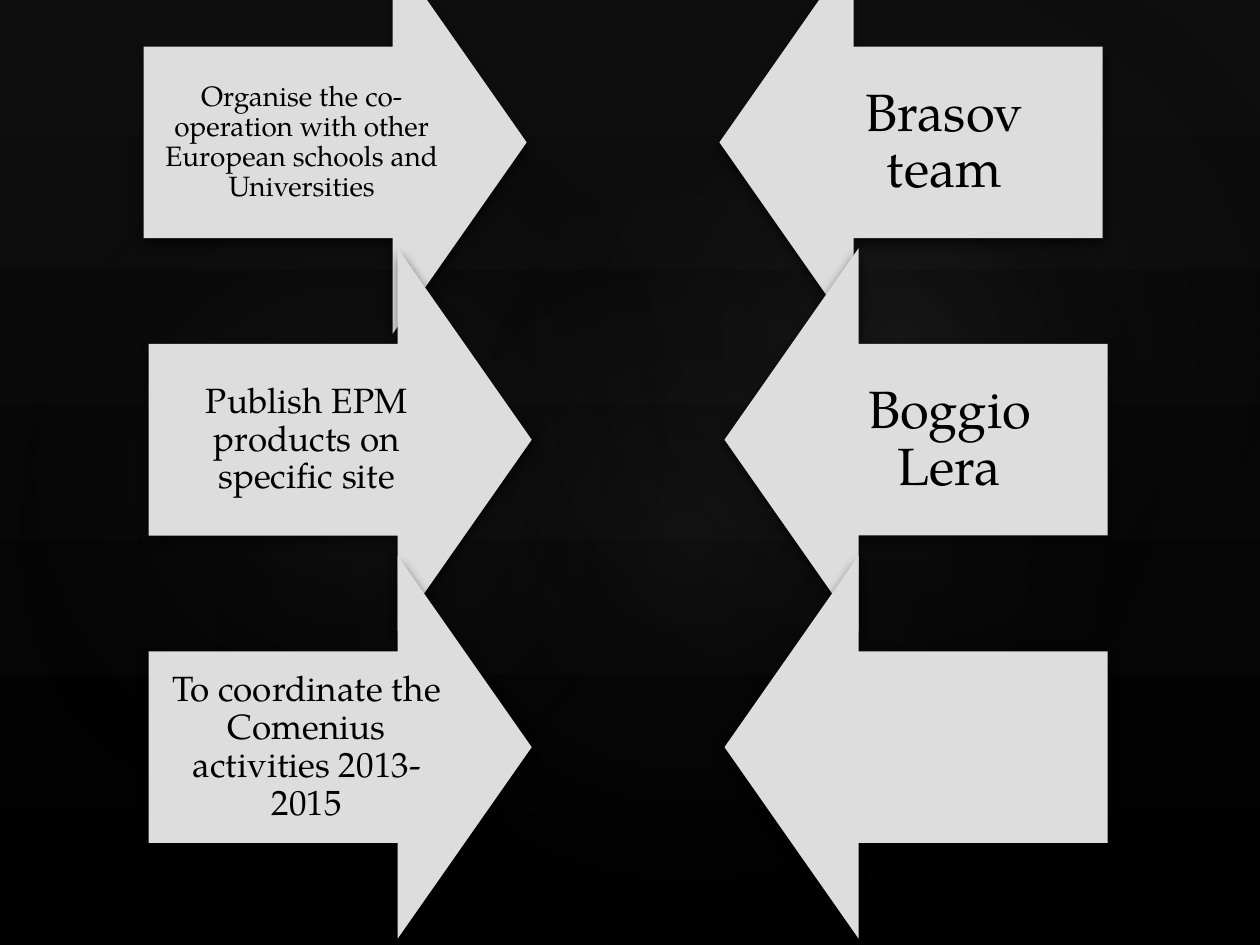
from lxml.etree import fromstring
from pptx import Presentation
from pptx.dml.color import RGBColor
from pptx.enum.shapes import MSO_SHAPE
from pptx.enum.text import MSO_ANCHOR, PP_ALIGN
from pptx.util import Inches, Pt

NAMESPACE = 'xmlns:a="http://schemas.openxmlformats.org/drawingml/2006/main"'
FONT = "TeX Gyre Pagella"
BLACK = RGBColor(0x00, 0x00, 0x00)
CHARCOAL = RGBColor(0x0E, 0x0E, 0x0E)
GLOW_GRAY = RGBColor(0x94, 0x94, 0x94)
ARROW_GRAY = RGBColor(0xDD, 0xDD, 0xDD)

ARROW_SIZE = 3.04
LABEL_WIDTH = 2.51
LABEL_HEIGHT = ARROW_SIZE / 2
COLUMN_STEP = 4.57

# left, top, width, height, rotation, opacity in percent
GLOWS = [
    (1.5, 1.14, 7.92, 6.24, 328.7, 7),
    (-0.3, 1.28, 6.06, 4.9, 294.3, 8),
    (3.58, 0.13, 7.09, 5.2, 328.7, 8),
]

# left, top, task, task text size, task inset, team
ROWS = [
    (1.14, -0.39,
     "Organise the co-operation with other European schools and Universities",
     16, 0.12, "Brasov team"),
    (1.18, 1.97, "Publish EPM products on specific site",
     20, 0.16, "Boggio Lera"),
    (1.18, 4.41, "To coordinate the Comenius activities 2013-2015",
     20, 0.16, None),
]


def set_background(slide):
    fill = slide.background.fill
    fill.gradient()
    fill.gradient_angle = 270
    for stop, color in zip(fill.gradient_stops, (CHARCOAL, BLACK)):
        stop.color.rgb = color
    fill.gradient_stops[0].position = 0
    fill.gradient_stops[1].position = 1


def add_glow(slide, left, top, width, height, rotation, opacity):
    """Add an ellipse that fades from its centre to full transparency."""
    glow = slide.shapes.add_shape(
        MSO_SHAPE.OVAL, Inches(left), Inches(top), Inches(width), Inches(height))
    glow.rotation = rotation
    glow.shadow.inherit = False
    glow.line.fill.background()
    gradient = fromstring(
        f'<a:gradFill {NAMESPACE} rotWithShape="1"><a:gsLst>'
        f'<a:gs pos="0"><a:srgbClr val="{GLOW_GRAY}">'
        f'<a:alpha val="{opacity * 1000}"/></a:srgbClr></a:gs>'
        f'<a:gs pos="58000"><a:srgbClr val="{BLACK}">'
        '<a:alpha val="0"/></a:srgbClr></a:gs></a:gsLst>'
        '<a:path path="circle">'
        '<a:fillToRect l="50000" t="50000" r="50000" b="50000"/>'
        '</a:path></a:gradFill>')
    glow.element.spPr.find("{*}prstGeom").addnext(gradient)


def add_shadow(shape):
    shape.shadow.inherit = False
    shape.element.spPr.find("{*}effectLst").append(fromstring(
        f'<a:outerShdw {NAMESPACE} blurRad="{Pt(6)}" dist="{Pt(3)}" '
        'dir="5400000" rotWithShape="0">'
        f'<a:srgbClr val="{BLACK}"><a:alpha val="60000"/></a:srgbClr>'
        '</a:outerShdw>'))


def add_arrow(group, left, top, rotation):
    arrow = group.shapes.add_shape(
        MSO_SHAPE.DOWN_ARROW, Inches(left), Inches(top),
        Inches(ARROW_SIZE), Inches(ARROW_SIZE))
    arrow.rotation = rotation
    arrow.adjustments[0] = 0.5
    arrow.adjustments[1] = 0.35
    arrow.fill.solid()
    arrow.fill.fore_color.rgb = ARROW_GRAY
    arrow.line.fill.background()
    add_shadow(arrow)


def add_label(group, left, top, text, size, inset):
    label = group.shapes.add_textbox(
        Inches(left), Inches(top), Inches(LABEL_WIDTH), Inches(LABEL_HEIGHT))
    frame = label.text_frame
    frame.word_wrap = True
    frame.vertical_anchor = MSO_ANCHOR.MIDDLE
    frame.margin_left = frame.margin_right = Inches(inset)
    frame.margin_top = frame.margin_bottom = Inches(inset)
    frame.text = text
    paragraph = frame.paragraphs[0]
    paragraph.alignment = PP_ALIGN.CENTER
    paragraph.line_spacing = 0.9
    font = paragraph.runs[0].font
    font.name = FONT
    font.size = Pt(size)
    font.color.rgb = BLACK


def add_row(slide, left, top, task, task_size, task_inset, team):
    """Add a task arrow and a team arrow that point at each other."""
    group = slide.shapes.add_group_shape()
    team_left = left + COLUMN_STEP
    label_top = top + (ARROW_SIZE - LABEL_HEIGHT) / 2
    add_arrow(group, left, top, 270)
    add_label(group, left, label_top, task, task_size, task_inset)
    add_arrow(group, team_left, top, 90)
    if team:
        team_label_left = team_left + ARROW_SIZE - LABEL_WIDTH
        add_label(group, team_label_left, label_top, team, 30, 0.23)


def main():
    presentation = Presentation()
    presentation.slide_width = Inches(10)
    presentation.slide_height = Inches(7.5)
    slide = presentation.slides.add_slide(presentation.slide_layouts[6])
    set_background(slide)
    for glow in GLOWS:
        add_glow(slide, *glow)
    for row in ROWS:
        add_row(slide, *row)
    presentation.save("out.pptx")


if __name__ == "__main__":
    main()
